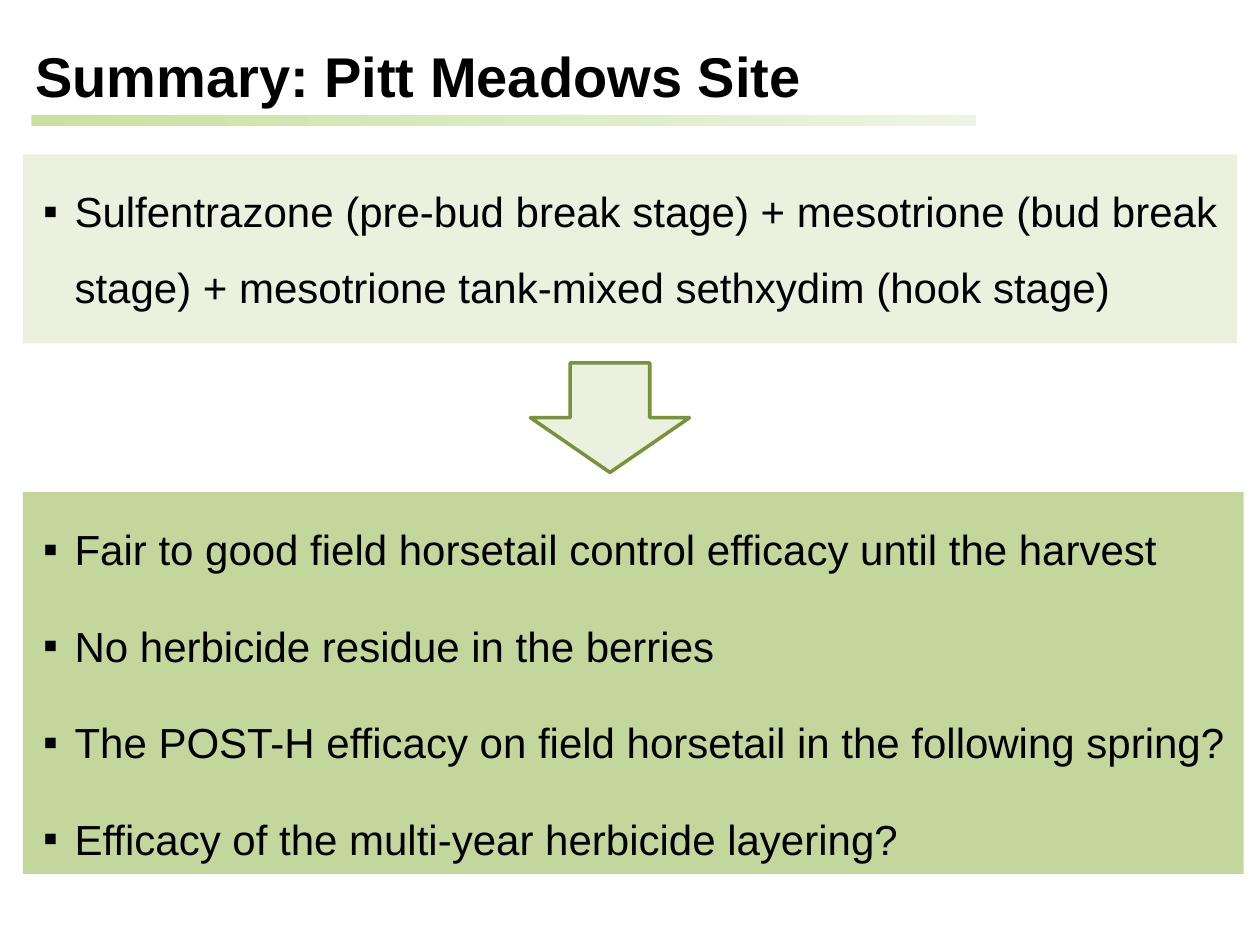
import pptx
import pptx.dml.color
import pptx.enum.shapes
import pptx.enum.text
import pptx.oxml
import pptx.oxml.ns
import pptx.util

Pt = pptx.util.Pt
SHAPE = pptx.enum.shapes.MSO_SHAPE

# Content
TITLE = "Summary: Pitt Meadows Site"
TREATMENT = [
    "Sulfentrazone (pre-bud break stage) + mesotrione (bud break stage) "
    "+ mesotrione tank-mixed sethxydim (hook stage)",
]
FINDINGS = [
    "Fair to good field horsetail control efficacy until the harvest",
    "No herbicide residue in the berries",
    "The POST-H efficacy on field horsetail in the following spring?",
    "Efficacy of the multi-year herbicide layering?",
]

# Look and layout: boxes are left, top, width, height in points
COLORS = {
    "text": "000000",
    "rule_start": "C7E29E",
    "rule_end": "EDF5E2",
    "pale": "EBF1DE",
    "green": "C3D69B",
    "outline": "77933C",
}
FONT = "Arial"
LEFT = 13
TITLE_BOX = (LEFT, 20.2, 673, 46)
RULE_BOX = (18, 66, 540, 5.8)
TREATMENT_BOX = (LEFT, 88.2, 694, 108)
ARROW_BOX = (303.1, 207.4, 90.9, 62.6)
FINDINGS_BOX = (LEFT, 281.2, 697.7, 218.2)


def rgb(name):
    return pptx.dml.color.RGBColor.from_string(COLORS[name])


def add_block(s, kind, box, fill, line=None):
    sp = s.shapes.add_shape(kind, *map(Pt, box))
    sp.shadow.inherit = False
    sp.fill.solid()
    sp.fill.fore_color.rgb = rgb(fill)
    if line:
        sp.line.color.rgb = rgb(line)
        sp.line.width = Pt(2)
    else:
        sp.line.fill.background()
    return sp


def add_bullet(p):
    pPr = p._p.get_or_add_pPr()
    pPr.set("marL", str(Pt(22.5)))
    pPr.set("indent", str(Pt(-18)))
    ns = pptx.oxml.ns.nsdecls("a")
    pPr.append(pptx.oxml.parse_xml(f'<a:buFont {ns} typeface="{FONT}"/>'))
    pPr.append(pptx.oxml.parse_xml(f'<a:buChar {ns} char="▪"/>'))


def write(sp, lines, size=24, bold=False, bullet=False, spacing=None, before=None):
    tf = sp.text_frame
    tf.word_wrap = True
    tf.auto_size = pptx.enum.text.MSO_AUTO_SIZE.SHAPE_TO_FIT_TEXT
    tf.vertical_anchor = pptx.enum.text.MSO_ANCHOR.TOP
    for i, line in enumerate(lines):
        p = tf.add_paragraph() if i else tf.paragraphs[0]
        p.alignment = pptx.enum.text.PP_ALIGN.LEFT
        if spacing:
            p.line_spacing = spacing
        if before:
            p.space_before = Pt(before)
        if bullet:
            add_bullet(p)
        r = p.add_run()
        r.text = line
        r.font.name = FONT
        r.font.size = Pt(size)
        r.font.bold = bold
        r.font.color.rgb = rgb("text")


prs = pptx.Presentation()
prs.slide_width, prs.slide_height = Pt(720), Pt(540)
s = prs.slides.add_slide(prs.slide_layouts[6])

# Fading rule under the title
rule = add_block(s, SHAPE.RECTANGLE, RULE_BOX, "rule_start")
rule.fill.gradient()
rule.fill.gradient_angle = 0
for stop, name in zip(rule.fill.gradient_stops, ("rule_start", "rule_end")):
    stop.color.rgb = rgb(name)

# Title
write(s.shapes.add_textbox(*map(Pt, TITLE_BOX)), [TITLE], size=32, bold=True)

# Treatment leads by arrow to findings
add_block(s, SHAPE.DOWN_ARROW, ARROW_BOX, "pale", line="outline")
for box, fill, lines in (
    (TREATMENT_BOX, "pale", TREATMENT),
    (FINDINGS_BOX, "green", FINDINGS),
):
    sp = add_block(s, SHAPE.RECTANGLE, box, fill)
    write(sp, lines, bullet=True, spacing=1.5, before=12)

prs.save("out.pptx")
